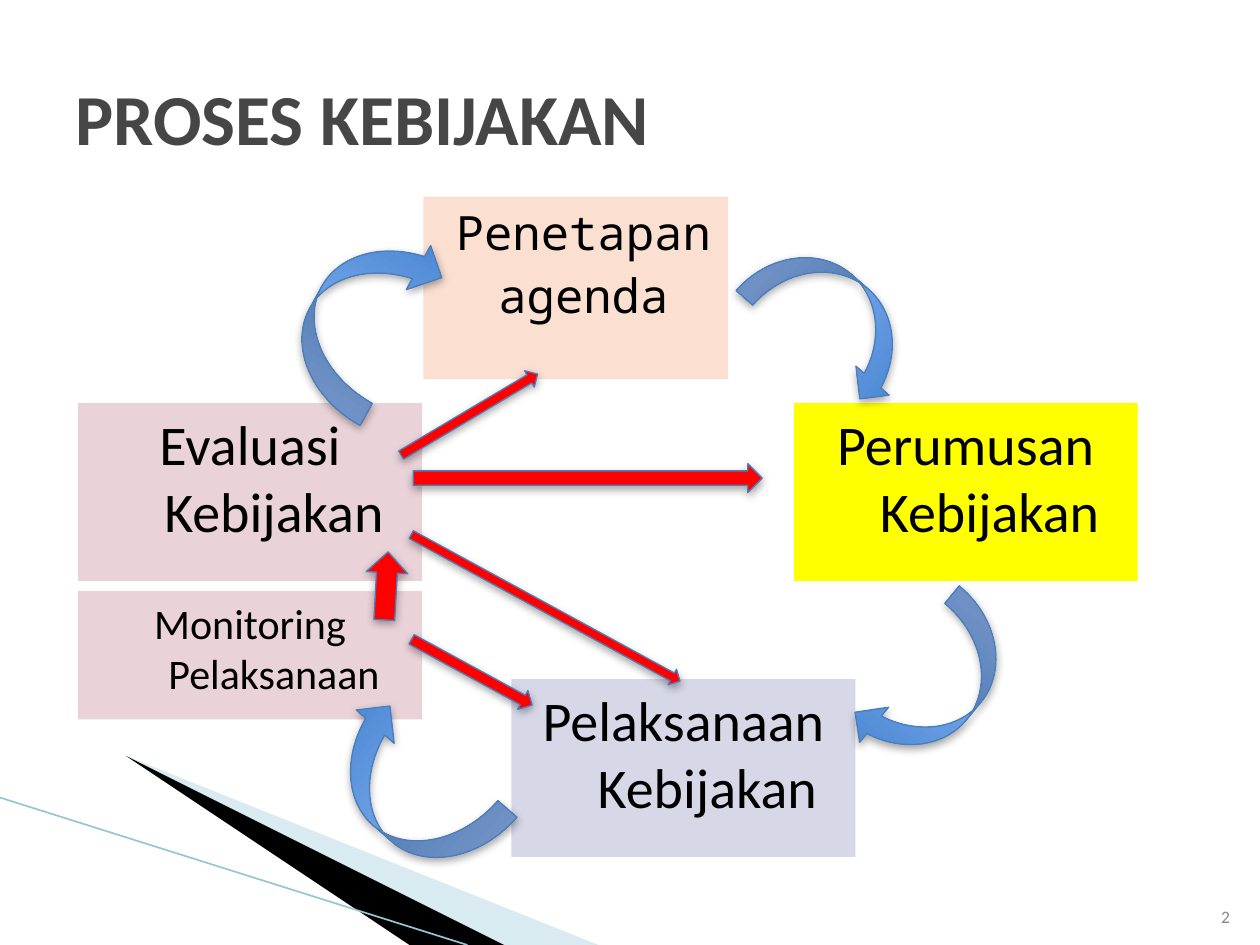
"""Build the policy process cycle slide."""
from dataclasses import dataclass

from lxml import etree
from pptx import Presentation
from pptx.dml.color import RGBColor
from pptx.enum.shapes import MSO_CONNECTOR, MSO_SHAPE
from pptx.enum.text import MSO_ANCHOR, PP_ALIGN
from pptx.oxml import parse_xml
from pptx.oxml.ns import nsdecls, qn
from pptx.util import Inches, Pt

RECT = MSO_SHAPE.RECTANGLE
CURVED, DOWN = MSO_SHAPE.CURVED_LEFT_ARROW, MSO_SHAPE.DOWN_ARROW
STRAIGHT = MSO_CONNECTOR.STRAIGHT
TOP, MIDDLE, BOTTOM = MSO_ANCHOR.TOP, MSO_ANCHOR.MIDDLE, MSO_ANCHOR.BOTTOM
LEFT, CENTER, RIGHT = PP_ALIGN.LEFT, PP_ALIGN.CENTER, PP_ALIGN.RIGHT

COLORS = {
    "title": "464646", "text": "000000", "number": "898989",
    "peach": "FBE0D1", "yellow": "FFFF00", "lavender": "D7D8E7", "rose": "EAD3D8",
    "red": "FF0000", "outline": "4A7EBB", "blue": "3F80CD", "light_blue": "9BC1FF",
    "wedge": "A0CBDC", "black": "000000", "edge": "97C5D8",
}
SHADOW = (
    f'<a:effectLst {nsdecls("a")}><a:outerShdw blurRad="63500" dist="22860" dir="5400000" '
    'rotWithShape="0"><a:srgbClr val="000000"><a:alpha val="35000"/></a:srgbClr>'
    "</a:outerShdw></a:effectLst>"
)


@dataclass
class Stage:
    """A box naming one stage of the process."""
    lines: tuple[str, ...]
    left: float
    top: float
    width: float
    height: float
    color: str
    size: float = 32
    font: str = "Calibri"
    margin: float = 0.38
    indent: float = -0.38


@dataclass
class Arrow:
    """A block arrow, curved or straight."""
    left: float
    top: float
    width: float
    height: float
    rotation: float
    flip: str = ""


STAGES = (
    Stage(("Penetapan", "agenda"), 3.36, 1.56, 2.42, 1.45, "peach", 27,
          "Noto Sans Mono", 0.4, -0.28),
    Stage(("Perumusan Kebijakan",), 6.3, 3.2, 2.73, 1.41, "yellow"),
    Stage(("Pelaksanaan Kebijakan",), 4.06, 5.39, 2.73, 1.41, "lavender"),
    Stage(("Monitoring Pelaksanaan",), 0.62, 4.69, 2.73, 1.02, "rose", 24),
    Stage(("Evaluasi Kebijakan",), 0.62, 3.2, 2.73, 1.41, "rose"),
)
CYCLE_ARROWS = (
    Arrow(6.28, 1.79, 0.7, 1.48, 311.2),
    Arrow(7.06, 4.71, 0.72, 1.48, 39.5),
    Arrow(2.86, 5.51, 0.8, 1.54, 311.2, "HV"),
    Arrow(2.48, 1.74, 0.8, 1.54, 28.9, "HV"),
)
FEEDBACK_ARROWS = (
    Arrow(3.66, 4.79, 0.17, 1.09, 298.6),
    Arrow(2.9, 4.38, 0.33, 0.54, 183.2, "H"),
    Arrow(4.26, 3.61, 0.14, 2.43, 298.6, "H"),
    Arrow(4.55, 2.41, 0.23, 2.77, 270, "H"),
    Arrow(3.65, 2.66, 0.15, 1.26, 239.3, "H"),
)


def rgb(name: str) -> RGBColor:
    """Return a named colour."""
    return RGBColor.from_string(COLORS[name])


def write(sp, lines, size, color, font="Calibri", align=LEFT, anchor=TOP, bold=False) -> None:
    """Fill a shape with formatted paragraphs."""
    tf = sp.text_frame
    tf.word_wrap = True
    tf.vertical_anchor = anchor
    tf.text = "\n".join(lines)
    for i, p in enumerate(tf.paragraphs):
        p.alignment = align
        p.space_before = Pt(4 if i else 0)
        for r in p.runs:
            r.font.name, r.font.size, r.font.bold = font, Pt(size), bold
            r.font.color.rgb = rgb(color)


def add_label(slide, box, text, size, color, align, anchor, bold=False) -> None:
    """Add a free-standing text box."""
    sp = slide.shapes.add_textbox(*map(Inches, box))
    write(sp, (text,), size, color, align=align, anchor=anchor, bold=bold)


def add_stage(slide, stage: Stage) -> None:
    """Add a stage box with hanging indents."""
    box = (stage.left, stage.top, stage.width, stage.height)
    sp = slide.shapes.add_shape(RECT, *map(Inches, box))
    sp.shadow.inherit = False
    sp.fill.solid()
    sp.fill.fore_color.rgb = rgb(stage.color)
    sp.line.fill.background()
    write(sp, stage.lines, stage.size, "text", stage.font, CENTER)
    for p in sp.text_frame.paragraphs:
        pPr = p._p.get_or_add_pPr()
        pPr.set("marL", str(Inches(stage.margin)))
        pPr.set("indent", str(Inches(stage.indent)))


def add_arrow(slide, arrow: Arrow, kind) -> None:
    """Add a shadowed block arrow, graded blue if curved and red if straight."""
    box = (arrow.left, arrow.top, arrow.width, arrow.height)
    sp = slide.shapes.add_shape(kind, *map(Inches, box))
    sp.rotation = arrow.rotation
    for axis in arrow.flip:
        sp._element.spPr.find(qn("a:xfrm")).set(f"flip{axis}", "1")
    if kind == CURVED:
        for i, value in enumerate((0.25, 0.5, 0.25)):
            sp.adjustments[i] = value
        sp.fill.gradient()
        sp.fill.gradient_angle = 90
        for stop, color in zip(sp.fill.gradient_stops, ("blue", "light_blue")):
            stop.color.rgb = rgb(color)
    else:
        sp.fill.solid()
        sp.fill.fore_color.rgb = rgb("red")
    sp.line.color.rgb = rgb("outline")
    sp.line.width = Pt(0.75)
    sp._element.spPr.append(parse_xml(SHADOW))


def add_wedge(slide, points, color: str, alpha: int = 100) -> None:
    """Add a decorative corner wedge."""
    builder = slide.shapes.build_freeform(*points[0], scale=Inches(1))
    builder.add_line_segments(points[1:])
    sp = builder.convert_to_shape()
    sp.shadow.inherit = False
    sp.fill.solid()
    sp.fill.fore_color.rgb = rgb(color)
    sp.line.fill.background()
    clr = sp._element.spPr.find(qn("a:solidFill"))[0]
    etree.SubElement(clr, qn("a:alpha")).set("val", str(alpha * 1000))


def add_edge(slide) -> None:
    """Add the thin line along the corner wedges."""
    cx = slide.shapes.add_connector(
        STRAIGHT, Inches(0), Inches(6.33), Inches(3.71), Inches(7.5))
    cx.line.color.rgb = rgb("edge")
    cx.line.width = Pt(0.95)
    etree.SubElement(cx._element.spPr, qn("a:effectLst"))


def main() -> None:
    """Build and save the slide."""
    prs = Presentation()
    prs.slide_width, prs.slide_height = Inches(10), Inches(7.5)
    slide = prs.slides.add_slide(prs.slide_layouts[6])
    add_wedge(slide, ((0.55, 6.5), (5.95, 7.5), (4.56, 7.5)), "wedge", 40)
    add_wedge(slide, ((0.53, 6.49), (4.57, 7.5), (3.72, 7.5)), "black")
    add_edge(slide)
    add_label(slide, (0.5, 0.3, 9, 1.25), "PROSES KEBIJAKAN", 41, "title", LEFT, MIDDLE, True)
    for stage in STAGES:
        add_stage(slide, stage)
    for arrow in CYCLE_ARROWS:
        add_arrow(slide, arrow, CURVED)
    for arrow in FEEDBACK_ARROWS:
        add_arrow(slide, arrow, DOWN)
    add_label(slide, (9.46, 7.01, 0.4, 0.4), "2", 10, "number", RIGHT, BOTTOM)
    prs.save("out.pptx")


if __name__ == "__main__":
    main()
